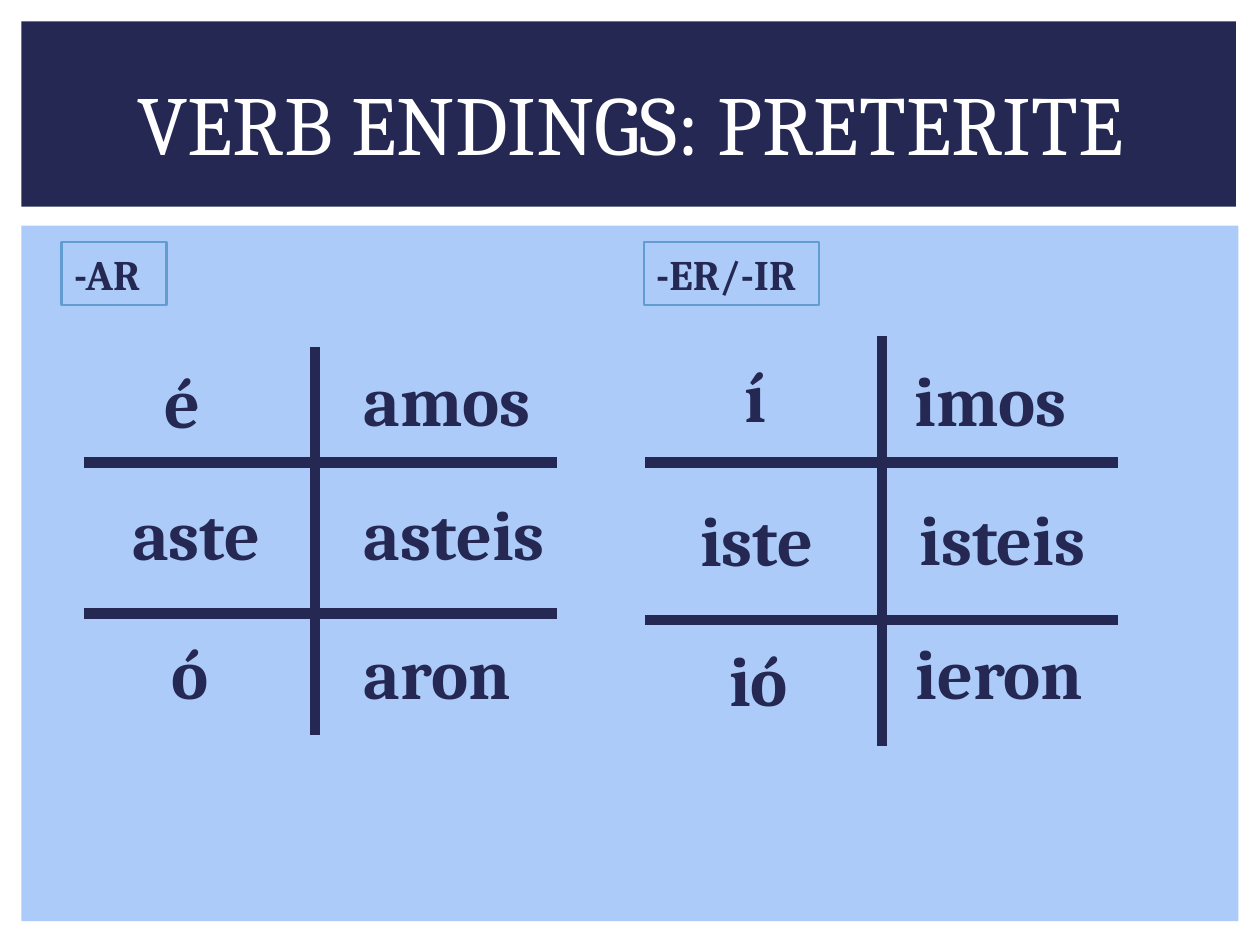
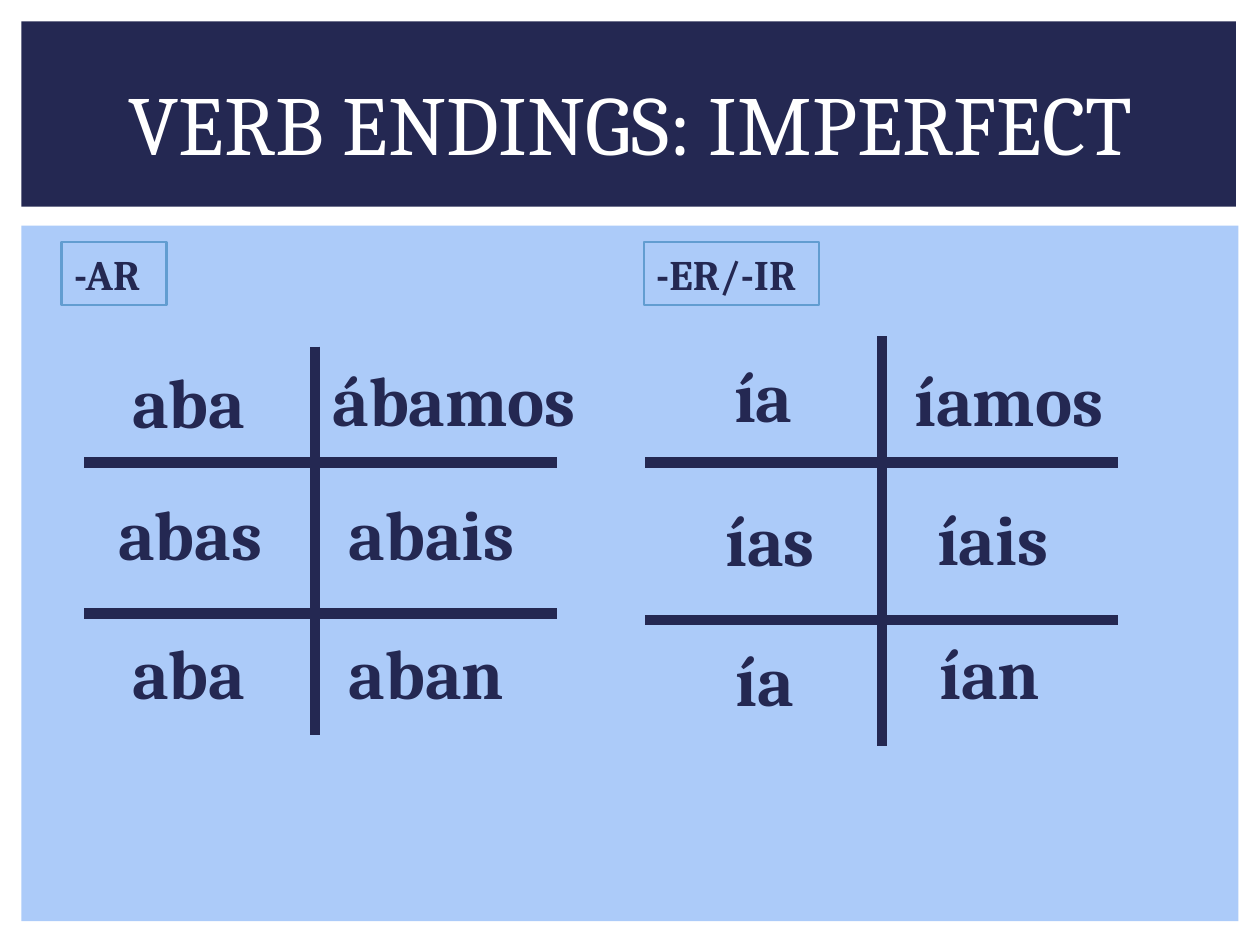
"""Builds two slides of Spanish verb endings, preterite and imperfect."""
from lxml import etree
from pptx import Presentation, util as u
from pptx.dml.color import RGBColor
from pptx.enum import shapes, text
from pptx.oxml import ns

NAVY = RGBColor(0x24, 0x28, 0x52)
SKY = RGBColor(0xAC, 0xCB, 0xF9)
BLUE = RGBColor(0x62, 0x9D, 0xD1)
WHITE = RGBColor(0xFF, 0xFF, 0xFF)
FONT = "Cambria"

deck = Presentation()
deck.slide_width, deck.slide_height = u.Inches(10), u.Inches(7.5)
COLUMN, ROW = deck.slide_width / 10, deck.slide_height / 7.5


def area(left, top, width, height):
    """Turn grid columns and rows into lengths."""
    return [int(size) for size in (left * COLUMN, top * ROW, width * COLUMN, height * ROW)]


def write(frame, words, size, color, bold=True):
    """Write one run in the first paragraph of a text frame."""
    frame.word_wrap = True
    span = frame.paragraphs[0].add_run()
    span.text = words
    span.font.name, span.font.size, span.font.bold = FONT, u.Pt(size), bold
    span.font.color.rgb = color
    return frame.paragraphs[0]


BANDS = [(SKY, (0.17, 1.79, 9.66, 5.52)), (NAVY, (0.17, 0.17, 9.64, 1.47))]
TITLE_AREA = (0.42, 0.39, 9.17, 1.15)
RULES = [
    (2.5, 2.75, 2.5, 5.83), (7, 2.67, 7, 5.92),
    (4.42, 3.67, 0.67, 3.67), (4.42, 4.87, 0.67, 4.87),
    (8.87, 4.92, 5.12, 4.92), (8.87, 3.67, 5.12, 3.67),
]
GROUPS = [("-AR", 0.49, 0.83), ("-ER/-IR", 5.11, 1.39)]
ENDING_TOPS = [(2.8, 3.84, 4.95), (2.78, 3.84, 4.95), (2.75, 3.89, 5), (2.78, 3.88, 4.95)]
ENDING_HEIGHT = 0.77

# Each ending is a word with its left edge and width.
TENSES = {
    "VERB ENDINGS: PRETERITE": [
        [("é", 1.21, 0.83), ("aste", 0.95, 1.44), ("ó", 1.26, 0.83)],
        [("amos", 2.79, 1.79), ("asteis", 2.79, 1.71), ("aron", 2.79, 1.62)],
        [("í", 5.81, 0.83), ("iste", 5.46, 1.54), ("ió", 5.69, 0.83)],
        [("imos", 7.16, 2.44), ("isteis", 7.2, 2.08), ("ieron", 7.17, 1.92)],
    ],
    "VERB ENDINGS: IMPERFECT": [
        [("aba", 0.95, 1.21), ("abas", 0.84, 1.44), ("aba", 0.95, 1.14)],
        [("ábamos", 2.54, 2.57), ("abais", 2.67, 2.46), ("aban", 2.67, 1.62)],
        [("ía", 5.73, 0.83), ("ías", 5.66, 1.54), ("ía", 5.74, 0.83)],
        [("íamos", 7.16, 2.44), ("íais", 7.34, 2.08), ("ían", 7.36, 1.92)],
    ],
}

layout = deck.slide_layouts[5]
pages = [deck.slides.add_slide(layout) for tense in TENSES]

for number, (color, place) in enumerate(BANDS):
    band = pages[0].shapes.add_shape(shapes.MSO_SHAPE.RECTANGLE, *area(*place))
    band.shadow.inherit = False
    band.fill.solid()
    band.fill.fore_color.rgb = color
    band.line.fill.background()
    band.element.nvSpPr.cNvPr.id = 20 + number
    layout.shapes.element.insert(2 + number, band.element)

for page, (heading, columns) in zip(pages, TENSES.items()):
    title = page.shapes.title
    title.left, title.top, title.width, title.height = area(*TITLE_AREA)
    title.text_frame.vertical_anchor = text.MSO_ANCHOR.MIDDLE
    para = write(title.text_frame, heading, 48, WHITE, bold=False)
    para.alignment = text.PP_ALIGN.CENTER

    for ends in RULES:
        rule = page.shapes.add_connector(shapes.MSO_CONNECTOR.STRAIGHT, *area(*ends))
        rule.line.color.rgb = NAVY
        rule.line.width = u.Pt(6)
        etree.SubElement(rule.element.spPr, ns.qn("a:effectLst"))

    for group, left, width in GROUPS:
        box = page.shapes.add_shape(shapes.MSO_SHAPE.RECTANGLE, *area(left, 1.92, width, 0.5))
        box.shadow.inherit = False
        box.fill.background()
        box.line.color.rgb = BLUE
        box.line.width = u.Pt(1.5)
        box.text_frame.vertical_anchor = text.MSO_ANCHOR.TOP
        para = write(box.text_frame, group, 24, NAVY)
        para.alignment = text.PP_ALIGN.LEFT

    for tops, endings in zip(ENDING_TOPS, columns):
        for top, (ending, left, width) in zip(tops, endings):
            box = page.shapes.add_textbox(*area(left, top, width, ENDING_HEIGHT))
            write(box.text_frame, ending, 40, NAVY)

deck.save("out.pptx")
